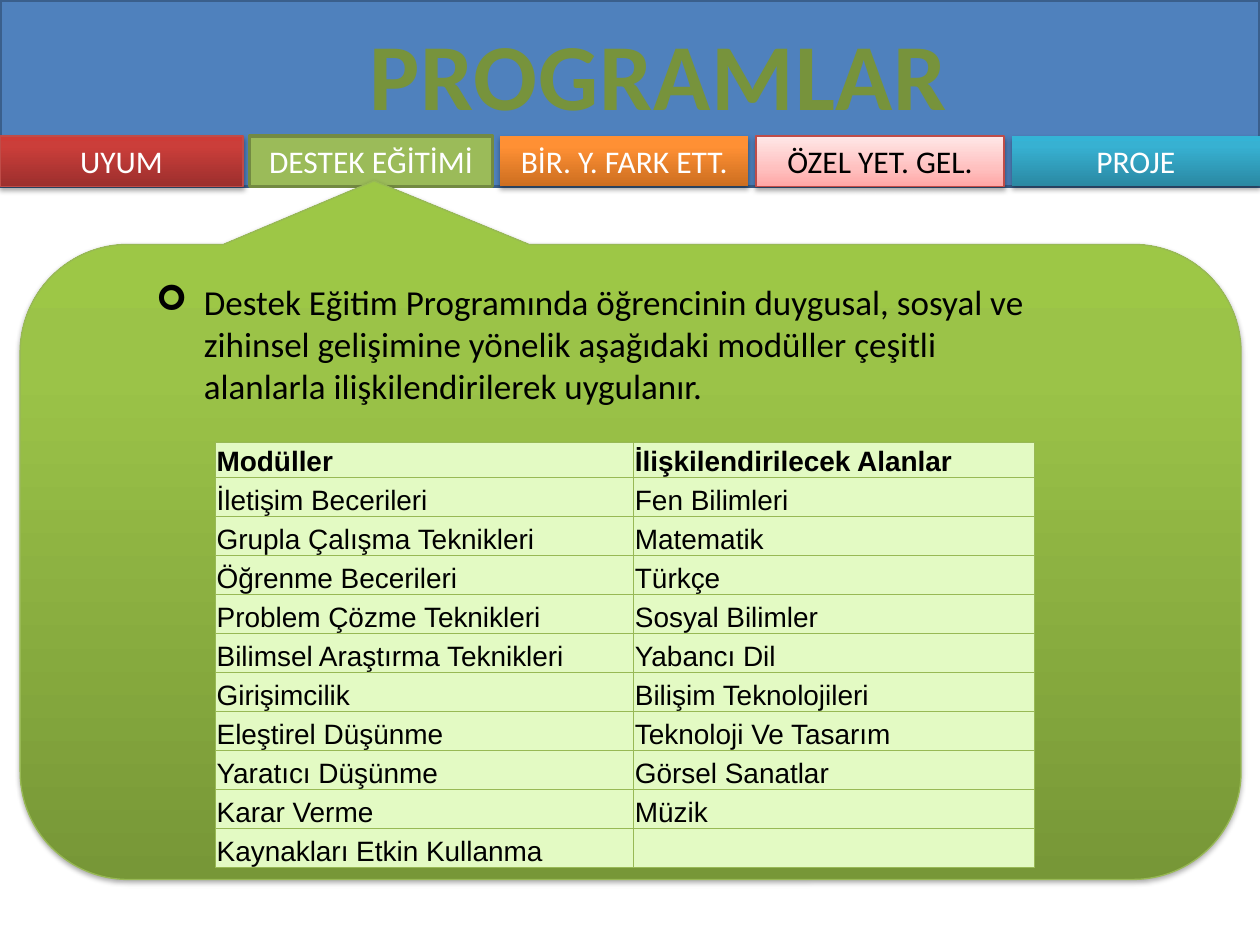
from copy import deepcopy

from lxml import etree
from pptx import Presentation
from pptx.dml.color import RGBColor
from pptx.enum import shapes, text
from pptx.oxml import ns
from pptx.util import Inches, Pt

SHAPE = shapes.MSO_SHAPE
CENTER = text.PP_ALIGN.CENTER
TABS = [
    ("UYUM", 0, 1.93, [(0, "9C2F2D"), (0.8, "CB3E3A"), (1, "CE3B37")], ("BF4C48", 0.75), "FFFFFF"),
    ("DESTEK EĞİTİMİ", 1.98, 1.93, "9BBB59", ("738A42", 2), "FFFFFF"),
    ("BİR. Y. FARK ETT.", 3.97, 1.97, [(0, "CC6E20"), (0.8, "FF9034"), (1, "FF9136")], None, "FFFFFF"),
    ("ÖZEL YET. GEL.", 6, 1.97, [(0, "FFA6A5"), (0.35, "FFC0BF"), (1, "FFE7E7")], ("BF4C48", 0.75), "000000"),
    ("PROJE", 8.03, 1.97, [(0, "2A88A2"), (0.8, "37B1D2"), (1, "34B4D6")], None, "FFFFFF"),
]
CALLOUT_STOPS = [(0, "779737"), (0.8, "9BC348"), (1, "9DC746")]
INTRO = (
    "Destek Eğitim Programında öğrencinin duygusal, sosyal ve zihinsel gelişimine "
    "yönelik aşağıdaki modüller çeşitli alanlarla ilişkilendirilerek uygulanır."
)
MODULES = [
    ("Modüller", "İlişkilendirilecek Alanlar"),
    ("İletişim Becerileri", "Fen Bilimleri"),
    ("Grupla Çalışma Teknikleri", "Matematik"),
    ("Öğrenme Becerileri", "Türkçe"),
    ("Problem Çözme Teknikleri", "Sosyal Bilimler"),
    ("Bilimsel Araştırma Teknikleri", "Yabancı Dil"),
    ("Girişimcilik", "Bilişim Teknolojileri"),
    ("Eleştirel Düşünme", "Teknoloji Ve Tasarım"),
    ("Yaratıcı Düşünme", "Görsel Sanatlar"),
    ("Karar Verme", "Müzik"),
    ("Kaynakları Etkin Kullanma", ""),
]


def color(value):
    return RGBColor.from_string(value)


def assign(target, values):
    for name, value in values.items():
        setattr(target, name, value)


def child(parent, tag, **attributes):
    return etree.SubElement(parent, ns.qn(tag), attributes)


def write(frame, words, size, ink, font="Calibri", bold=False):
    para = frame.paragraphs[0]
    span = para.add_run()
    assign(span, {"text": words})
    assign(span.font, {"size": Pt(size), "name": font, "bold": bold})
    span.font.color.rgb = color(ink)
    return para, span


def paint_gradient(shape, stops):
    fill = shape.fill
    fill.gradient()
    fill.gradient_angle = 90
    stop_list = shape._element.spPr.find(".//" + ns.qn("a:gsLst"))
    stop_list.append(deepcopy(stop_list[0]))
    for stop, (position, value) in zip(fill.gradient_stops, stops):
        stop.position = position
        stop.color.rgb = color(value)


def add_shadow(shape):
    effects = shape._element.spPr.find(ns.qn("a:effectLst"))
    shadow = child(effects, "a:outerShdw", blurRad=str(Pt(3.1)), dist=str(Pt(1.8)),
                   dir="5400000", rotWithShape="0")
    child(child(shadow, "a:srgbClr", val="000000"), "a:alpha", val="35000")


def add_block(page, kind, box, fill, line):
    shape = page.shapes.add_shape(kind, *map(Inches, box))
    shape.shadow.inherit = False
    if isinstance(fill, str):
        shape.fill.solid()
        shape.fill.fore_color.rgb = color(fill)
    else:
        paint_gradient(shape, fill)
        add_shadow(shape)
    if line:
        shape.line.color.rgb = color(line[0])
        shape.line.width = Pt(line[1])
    else:
        shape.line.fill.background()
    return shape


def add_text(page, box, wrap):
    frame = page.shapes.add_textbox(*map(Inches, box)).text_frame
    assign(frame, {"word_wrap": wrap, "auto_size": text.MSO_AUTO_SIZE.SHAPE_TO_FIT_TEXT})
    return frame


def add_tabs(page, top, height):
    for label, left, width, fill, line, ink in TABS:
        tab = add_block(page, SHAPE.RECTANGLE, (left, top, width, height), fill, line)
        assign(tab.text_frame, {"word_wrap": True, "vertical_anchor": text.MSO_ANCHOR.MIDDLE})
        para, _ = write(tab.text_frame, label, 18, ink)
        para.alignment = CENTER


def add_callout(page, box):
    callout = add_block(page, SHAPE.ROUNDED_RECTANGULAR_CALLOUT, box, CALLOUT_STOPS, ("98B955", 0.75))
    for index, value in enumerate((-0.21, -0.6, 0.17)):
        callout.adjustments[index] = value


def add_title(page, box):
    para, span = write(add_text(page, box, False), "PROGRAMLAR", 54, "77933C", bold=True)
    para.alignment = CENTER
    span.font._element.set("spc", "50")


def add_intro(page, box):
    para, _ = write(add_text(page, box, True), INTRO, 20, "000000")
    properties = para._p.get_or_add_pPr()
    properties.set("marL", str(Inches(0.38)))
    properties.set("indent", str(Inches(-0.38)))
    child(properties, "a:buFont", typeface="Wingdings")
    child(properties, "a:buChar", char="➢")


def add_borders(cell):
    properties = cell._tc.get_or_add_tcPr()
    for tag in ("a:lnL", "a:lnR", "a:lnT", "a:lnB"):
        border = child(properties, tag, w=str(Pt(0.75)))
        child(child(border, "a:solidFill"), "a:srgbClr", val="98B955")


def add_modules(page, box):
    table = page.shapes.add_table(len(MODULES), 2, *map(Inches, box)).table
    assign(table, {"first_row": False, "horz_banding": False})
    for column, width in zip(table.columns, (3.32, 3.18)):
        column.width = Inches(width)
    for index, (row, entries) in enumerate(zip(table.rows, MODULES)):
        row.height = Inches(0.31 if index else 0.27)
        for cell, words in zip(row.cells, entries):
            add_borders(cell)
            cell.fill.solid()
            cell.fill.fore_color.rgb = color("E3FAC3")
            assign(cell, {
                "margin_left": Inches(0.01),
                "margin_right": Inches(0.01),
                "margin_top": Inches(0.01),
                "margin_bottom": 0,
                "vertical_anchor": text.MSO_ANCHOR.BOTTOM,
            })
            write(cell.text_frame, words, 16, "000000", "Arial", index == 0)


def main():
    deck = Presentation()
    assign(deck, {"slide_width": Inches(10), "slide_height": Inches(7.5)})
    page = deck.slides.add_slide(deck.slide_layouts[6])
    add_block(page, SHAPE.RECTANGLE, (0, 0, 10, 1.48), "4F81BD", ("3A5F8C", 2))
    add_tabs(page, 1.08, 0.4)
    add_callout(page, (0.16, 1.94, 9.69, 5.04))
    add_title(page, (2.81, 0.08, 4.84, 1.01))
    add_modules(page, (1.71, 3.51, 6.5, 3.37))
    add_intro(page, (1.14, 2.18, 7.4, 1.45))
    deck.save("out.pptx")


if __name__ == "__main__":
    main()
